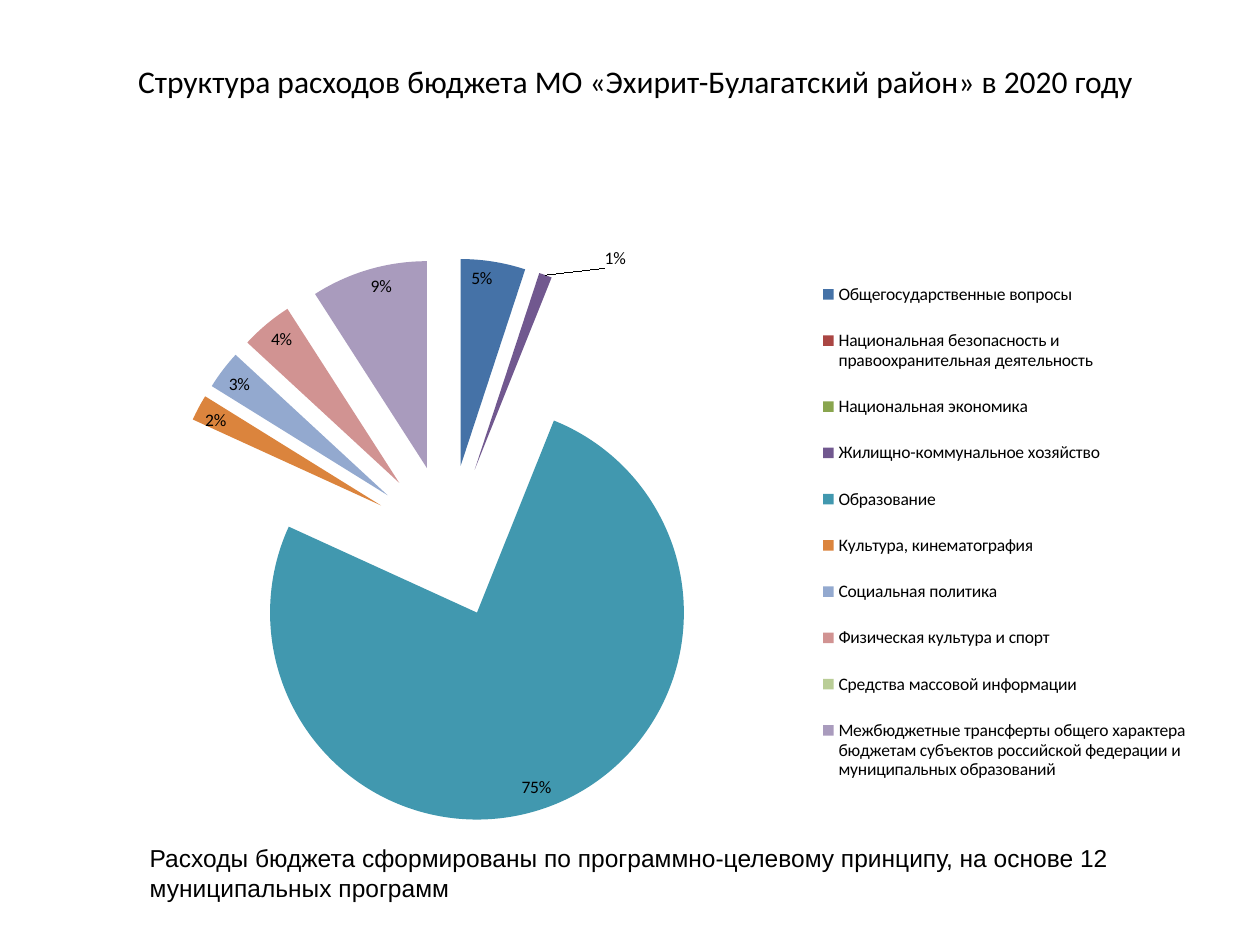
import pptx
import pptx.chart.data
import pptx.dml.color
import pptx.enum.chart
import pptx.enum.text
import pptx.oxml
import pptx.util
from pptx.util import Inches


def format_font(font, name, size, color="000000"):
    font.name = name
    font.size = pptx.util.Pt(size)
    font.color.rgb = pptx.dml.color.RGBColor.from_string(color)


def layout_element(**settings):
    """Manual chart layout; all lengths are fractions of the chart."""
    namespace = "http://schemas.openxmlformats.org/drawingml/2006/chart"
    children = "".join(f'<c:{tag} val="{value}"/>' for tag, value in settings.items())
    return pptx.oxml.parse_xml(
        f'<c:layout xmlns:c="{namespace}"><c:manualLayout>{children}</c:manualLayout></c:layout>')


presentation = pptx.Presentation()
presentation.slide_width = Inches(10)
presentation.slide_height = Inches(7.5)
slide = presentation.slides.add_slide(presentation.slide_layouts[5])

# Title
title = slide.shapes.title
title.left, title.top, title.width, title.height = (
    Inches(0.59), Inches(0.3), Inches(8.91), Inches(0.69))
title.text_frame.text = "Структура расходов бюджета МО «Эхирит-Булагатский район» в 2020 году"
title.text_frame.vertical_anchor = pptx.enum.text.MSO_ANCHOR.MIDDLE
title.text_frame.paragraphs[0].alignment = pptx.enum.text.PP_ALIGN.CENTER
format_font(title.text_frame.paragraphs[0].runs[0].font, "Calibri", 18)

# Expenditure shares in percent, with slice colours
expenditures = [
    ("Общегосударственные вопросы", 5, "4572A7"),
    ("Национальная безопасность и правоохранительная деятельность", 0, "AA4643"),
    ("Национальная экономика", 0, "89A54E"),
    ("Жилищно-коммунальное хозяйство", 1, "71588F"),
    ("Образование", 75, "4198AF"),
    ("Культура, кинематография", 2, "DB843D"),
    ("Социальная политика", 3, "93A9CF"),
    ("Физическая культура и спорт", 4, "D19392"),
    ("Средства массовой информации", 0, "B9CD96"),
    ("Межбюджетные трансферты общего характера бюджетам субъектов "
     "российской федерации и муниципальных образований", 9, "A99BBD"),
]
percent_format = '0"%"'
chart_data = pptx.chart.data.CategoryChartData(number_format=percent_format)
chart_data.categories = [name for name, share, color in expenditures]
chart_data.add_series("Series 1", [share for name, share, color in expenditures])

# Exploded pie chart
chart = slide.shapes.add_chart(
    pptx.enum.chart.XL_CHART_TYPE.PIE,
    Inches(0.5), Inches(1.75), Inches(9), Inches(4.95), chart_data).chart
chart.has_title = False
format_font(chart.font, "Calibri", 10)
plot = chart.plots[0]
plot.vary_by_categories = True
series = plot.series[0]
explosion = pptx.oxml.parse_xml(
    '<c:explosion xmlns:c="http://schemas.openxmlformats.org/drawingml/2006/chart" val="37"/>')
series._element.find("{*}tx").addnext(explosion)
for index, (name, share, color) in enumerate(expenditures):
    fill = series.points[index].format.fill
    fill.solid()
    fill.fore_color.rgb = pptx.dml.color.RGBColor.from_string(color)

plot_area = chart._chartSpace.chart.plotArea
for old_layout in plot_area.findall("{*}layout"):
    plot_area.remove(old_layout)
plot_area.insert(0, layout_element(
    layoutTarget="inner", xMode="edge", yMode="edge", x=0.09, y=0.06, w=0.5, h=0.91))

# Labels: inside the large slices, outside and spread apart for the thin ones
labels = series.data_labels
labels.show_value = True
labels.number_format = percent_format
labels.number_format_is_linked = False
labels.position = pptx.enum.chart.XL_LABEL_POSITION.INSIDE_END
format_font(labels.font, "Calibri", 10)
for index, shift in {1: -0.02, 2: 0.02, 3: 0.05, 8: 0}.items():
    label = series.points[index].data_label
    format_font(label.font, "Calibri", 10)
    label.position = pptx.enum.chart.XL_LABEL_POSITION.OUTSIDE_END
    if shift:
        label._dLbl.find("{*}idx").addnext(layout_element(x=shift, y=0))

# Legend
chart.has_legend = True
chart.legend.position = pptx.enum.chart.XL_LEGEND_POSITION.RIGHT
chart.legend.include_in_layout = False
format_font(chart.legend.font, "Calibri", 10)
for old_layout in chart.legend._element.findall("{*}layout"):
    chart.legend._element.remove(old_layout)
chart.legend._element.find("{*}legendPos").addnext(layout_element(
    xMode="edge", yMode="edge", x=0.67, y=0.06, w=0.32, h=0.88))

# Closing note
note = slide.shapes.add_textbox(Inches(1.09), Inches(6.64), Inches(8.44), Inches(0.57))
note.text_frame.word_wrap = True
note.text_frame.auto_size = pptx.enum.text.MSO_AUTO_SIZE.SHAPE_TO_FIT_TEXT
note.text_frame.vertical_anchor = pptx.enum.text.MSO_ANCHOR.MIDDLE
note.text_frame.text = ("Расходы бюджета сформированы по программно-целевому принципу, "
                        "на основе 12 муниципальных программ")
format_font(note.text_frame.paragraphs[0].runs[0].font, "Arial", 14)

presentation.save("out.pptx")
